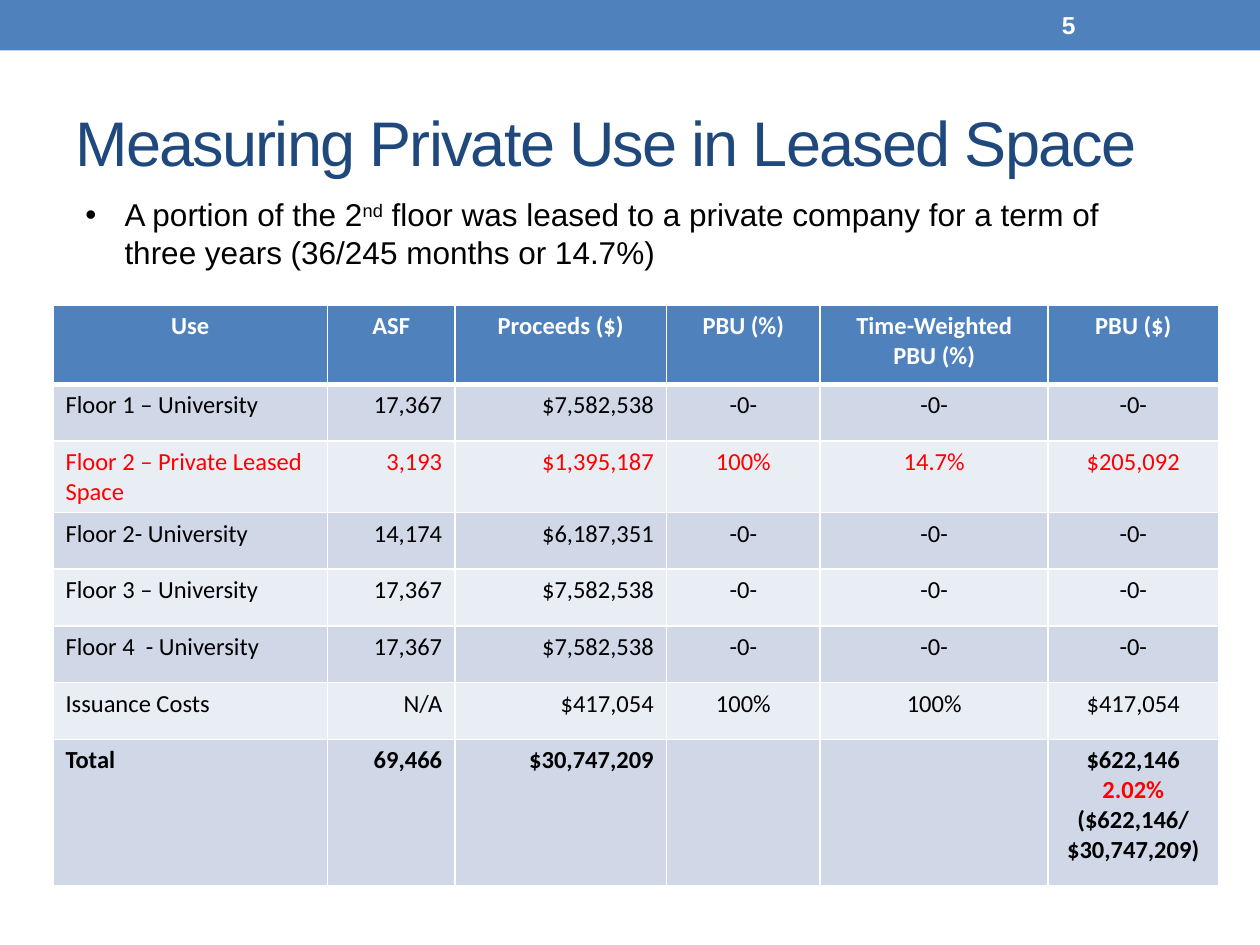
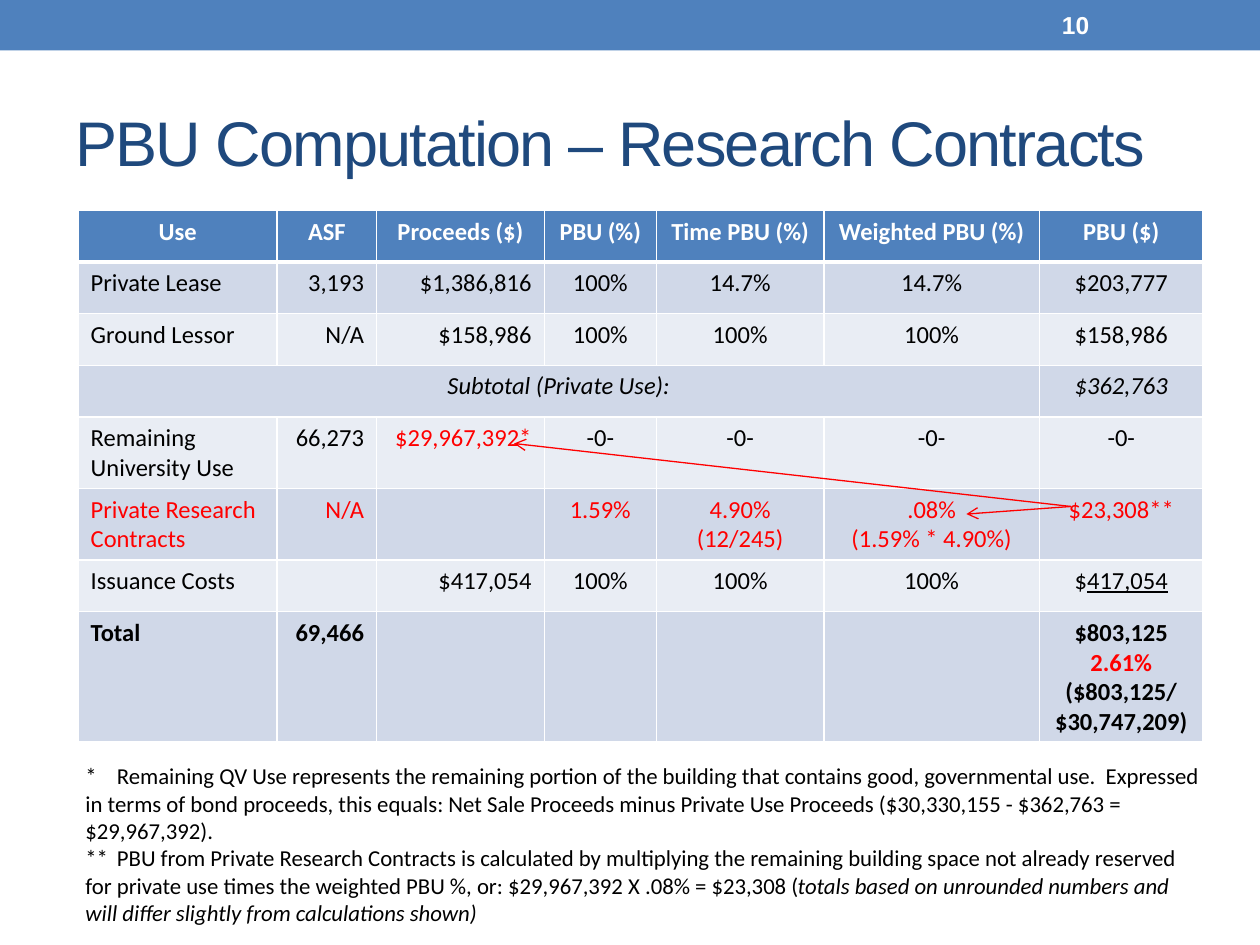
import lxml.etree
import pptx
import pptx.dml.color
import pptx.enum.shapes
import pptx.enum.text
import pptx.oxml.ns
import pptx.util

PX = 9144  # 100 px to the inch
BLUE, NAVY, RED, BLACK, WHITE = "4F81BD", "1F497D", "FF0000", "000000", "FFFFFF"
BAND_FILLS = ["D0D8E8", "E9EDF4"]
LEFT, CENTER, RIGHT = (pptx.enum.text.PP_ALIGN.LEFT, pptx.enum.text.PP_ALIGN.CENTER,
                       pptx.enum.text.PP_ALIGN.RIGHT)
TOP, MIDDLE = pptx.enum.text.MSO_ANCHOR.TOP, pptx.enum.text.MSO_ANCHOR.MIDDLE
qn = pptx.oxml.ns.qn
add_element = lxml.etree.SubElement


def paint(color_format, hex_color):
    color_format.rgb = pptx.dml.color.RGBColor.from_string(hex_color)


def write(frame, text, size=14, font="Calibri", color=BLACK, bold=False, italic=False,
          underline=False, align=LEFT, anchor=TOP, tracking=0,
          bullet=None, indent=0, tab=0):
    """Text is a string or a list of paragraphs; a paragraph is a string
    or a list of (text, format changes) spans."""
    frame.word_wrap = True
    frame.vertical_anchor = anchor
    base = dict(size=size, font=font, color=color, bold=bold, italic=italic,
                underline=underline, raised=0)
    for index, content in enumerate([text] if isinstance(text, str) else text):
        para = frame.add_paragraph() if index else frame.paragraphs[0]
        para.alignment = align
        properties = para._p.get_or_add_pPr()
        if bullet:
            properties.set("marL", str(indent * PX))
            properties.set("indent", str(-indent * PX))
            add_element(properties, qn("a:buFont"), typeface="Arial")
            add_element(properties, qn("a:buChar"), char=bullet)
        if tab:
            stops = add_element(properties, qn("a:tabLst"))
            add_element(stops, qn("a:tab"), pos=str(tab * PX), algn="l")
        for words, changes in [(content, {})] if isinstance(content, str) else content:
            look = {**base, **changes}
            span = para.add_run()
            span.text = words
            span.font.size = pptx.util.Pt(look["size"])
            span.font.name = look["font"]
            span.font.bold = look["bold"]
            span.font.italic = look["italic"]
            span.font.underline = look["underline"]
            paint(span.font.color, look["color"])
            if tracking:
                span._r.get_or_add_rPr().set("spc", str(tracking * 100))
            if look["raised"]:
                span._r.get_or_add_rPr().set("baseline", str(look["raised"] * 1000))


# Formats shared by both slides
TITLE = dict(size=36, font="Arial", color=NAVY, anchor=MIDDLE, tracking=-1)
NUMBER = dict(font="Arial", color=WHITE, bold=True, anchor=MIDDLE)
BULLET = dict(size=18, font="Arial", bullet="•", indent=31)
FOOTNOTE = dict(size=13, tab=25)
HEADER = dict(color=WHITE, bold=True, align=CENTER)
RED_SPAN = {"color": RED}
NONE = "-0-"

# Content: each table row is its cells, with the format of the row
leased_space = dict(
    number="5",
    title="Measuring Private Use in Leased Space",
    body=(58, 150, 875, 71),
    body_format=BULLET,
    body_text=[[("A portion of the 2", {}), ("nd", {"raised": 30}),
                (" floor was leased to a private company for a term of three years "
                 "(36/245 months or 14.7%)", {})]],
    corner=(42, 242),
    columns=[218, 101, 168, 122, 181, 135],
    heights=[63] + [45] * 6 + [116],
    rows=[
        (["Use", "ASF", "Proceeds ($)", "PBU (%)", "Time-Weighted PBU (%)", "PBU ($)"],
         HEADER),
        (["Floor 1 – University", "17,367", "$7,582,538", NONE, NONE, NONE], {}),
        (["Floor 2 – Private Leased Space", "3,193", "$1,395,187", "100%", "14.7%",
          "$205,092"], {"color": RED}),
        (["Floor 2- University", "14,174", "$6,187,351", NONE, NONE, NONE], {}),
        (["Floor 3 – University", "17,367", "$7,582,538", NONE, NONE, NONE], {}),
        (["Floor 4  - University", "17,367", "$7,582,538", NONE, NONE, NONE], {}),
        (["Issuance Costs", "N/A", "$417,054", "100%", "100%", "$417,054"], {}),
        (["Total", "69,466", "$30,747,209", "", "",
          ["$622,146", [("2.02%", RED_SPAN)], "($622,146/", "$30,747,209)"]],
         {"bold": True}),
    ],
    merged_row=None,
    arrow_start=None,
    arrow_ends=[],
)
research_contracts = dict(
    number="10",
    title="PBU Computation – Research Contracts",
    body=(58, 600, 908, 141),
    body_format=FOOTNOTE,
    body_text=[
        "*\tRemaining QV Use represents the remaining portion of the building that "
        "contains good, governmental use.  Expressed in terms of bond proceeds, this "
        "equals: Net Sale Proceeds minus Private Use Proceeds ($30,330,155 - $362,763 = "
        "$29,967,392).",
        [("**\tPBU from Private Research Contracts is calculated by multiplying the "
          "remaining building space not already reserved for private use times the "
          "weighted PBU %, or: $29,967,392 X .08% = $23,308 (", {}),
         ("totals based on unrounded numbers and will differ slightly from "
          "calculations shown)", {"italic": True})],
    ],
    corner=(62, 167),
    columns=[158, 79, 133, 89, 133, 171, 130],
    heights=[41] * 8,
    rows=[
        (["Use", "ASF", "Proceeds ($)", "PBU (%)", "Time PBU (%)", "Weighted PBU (%)",
          "PBU ($)"], HEADER),
        (["Private Lease", "3,193", "$1,386,816", "100%", "14.7%", "14.7%", "$203,777"],
         {}),
        (["Ground Lessor", "N/A", "$158,986", "100%", "100%", "100%", "$158,986"], {}),
        (["Subtotal (Private Use):", "", "", "", "", "", "$362,763"],
         {"italic": True, "align": CENTER}),
        (["Remaining University Use", "66,273", [[("$29,967,392*", RED_SPAN)]],
          NONE, NONE, NONE, NONE], {}),
        (["Private Research Contracts", "N/A", "", "1.59%", ["4.90%", "(12/245)"],
          [".08%", "(1.59% * 4.90%)"], "$23,308**"], {"color": RED}),
        (["Issuance Costs", "", "$417,054", "100%", "100%", "100%",
          [[("$", {}), ("417,054", {"underline": True})]]], {}),
        (["Total", "69,466", "", "", "", "",
          ["$803,125", [("2.61%", RED_SPAN)], "($803,125/", "$30,747,209)"]],
         {"bold": True}),
    ],
    merged_row=3,
    arrow_start=(850, 402),
    arrow_ends=[(408, 352), (767, 408)],
)

deck = pptx.Presentation()
deck.slide_width, deck.slide_height = 1000 * PX, 750 * PX

for content in [leased_space, research_contracts]:
    page = deck.slides.add_slide(deck.slide_layouts[6])

    # Top band
    band = page.shapes.add_shape(pptx.enum.shapes.MSO_SHAPE.RECTANGLE,
                                 0, 0, 1000 * PX, 40 * PX)
    band.shadow.inherit = False
    band.fill.solid()
    paint(band.fill.fore_color, BLUE)
    band.line.fill.background()

    # Title, page number and body text
    for place, text, look in [
        ((50, 58, 900, 108), content["title"], TITLE),
        ((833, 2, 117, 36), content["number"], NUMBER),
        (content["body"], content["body_text"], content["body_format"]),
    ]:
        box = page.shapes.add_textbox(*[length * PX for length in place])
        write(box.text_frame, text, **look)

    # Table
    left, top = content["corner"]
    columns, heights, rows = content["columns"], content["heights"], content["rows"]
    table = page.shapes.add_table(len(rows), len(columns), left * PX, top * PX,
                                  sum(columns) * PX, sum(heights) * PX).table
    table.horz_banding = False
    for column, width in zip(table.columns, columns):
        column.width = width * PX
    for row, height in zip(table.rows, heights):
        row.height = height * PX

    for row_index, (texts, look) in enumerate(rows):
        for column_index, text in enumerate(texts):
            cell = table.cell(row_index, column_index)
            edges = {"L": 1, "R": 1,
                     "T": 3 if row_index == 1 else 1,
                     "B": 3 if row_index == 0 else 1}
            for side, points in edges.items():
                edge = add_element(cell._tc.get_or_add_tcPr(), qn("a:ln" + side),
                                   w=str(pptx.util.Pt(points)))
                edge_fill = add_element(edge, qn("a:solidFill"))
                add_element(edge_fill, qn("a:srgbClr"), val=WHITE)
            cell.fill.solid()
            paint(cell.fill.fore_color,
                  BAND_FILLS[(row_index - 1) % 2] if row_index else BLUE)
            if text:
                column_align = [LEFT, RIGHT, RIGHT][column_index] if column_index < 3 else CENTER
                write(cell.text_frame, text, **{"align": column_align, **look})

    # Subtotal label spans all columns but the last
    if content["merged_row"]:
        label = table.cell(content["merged_row"], 0)
        label.merge(table.cell(content["merged_row"], len(columns) - 2))

    # Arrows from the result to its factors
    for arrow_end in content["arrow_ends"]:
        ends = [length * PX for length in content["arrow_start"] + arrow_end]
        arrow = page.shapes.add_connector(pptx.enum.shapes.MSO_CONNECTOR.STRAIGHT, *ends)
        arrow.line.width = pptx.util.Pt(0.75)
        paint(arrow.line.color, RED)
        add_element(arrow.line._get_or_add_ln(), qn("a:tailEnd"), type="arrow")
        add_element(arrow._element.spPr, qn("a:effectLst"))

deck.save("out.pptx")
